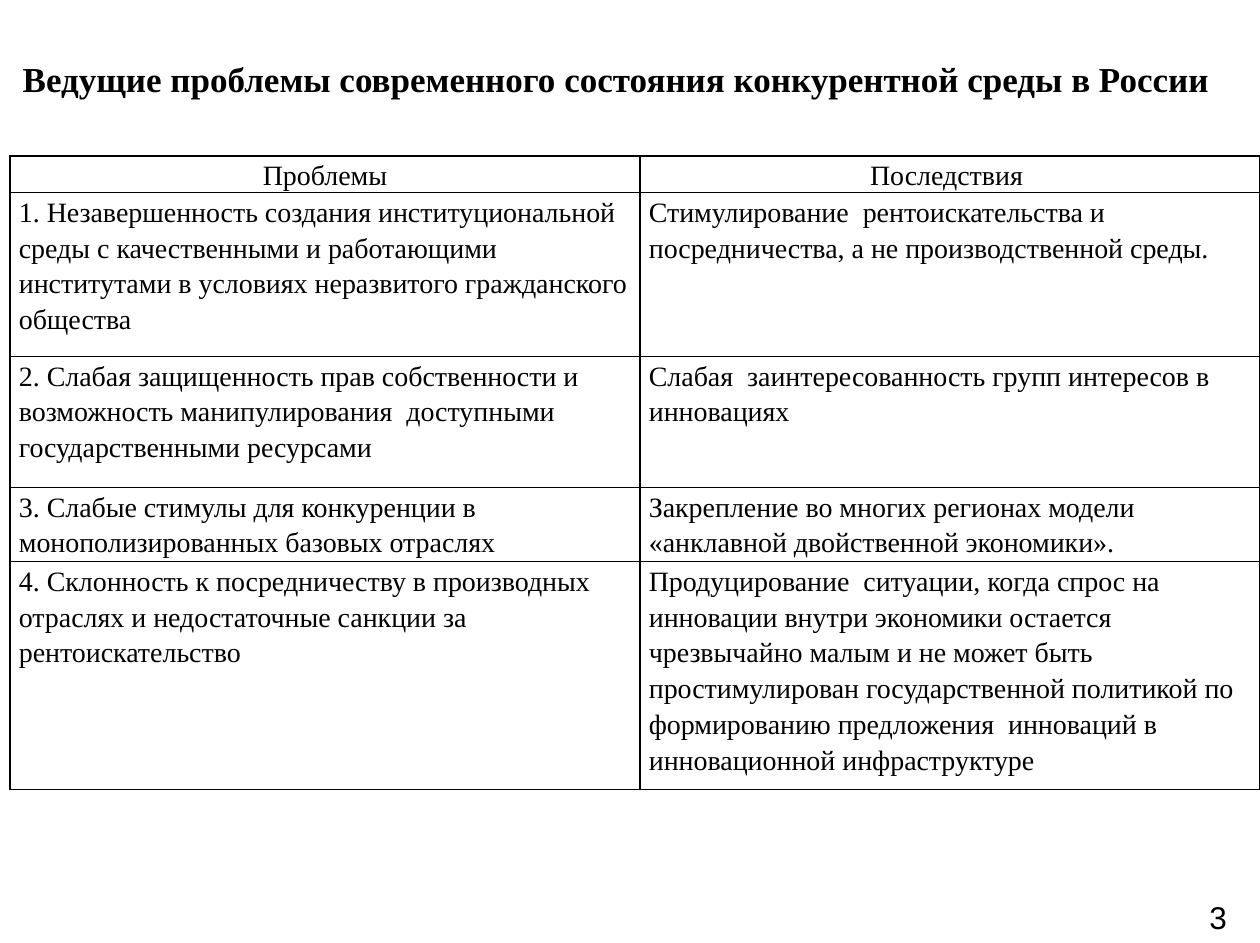
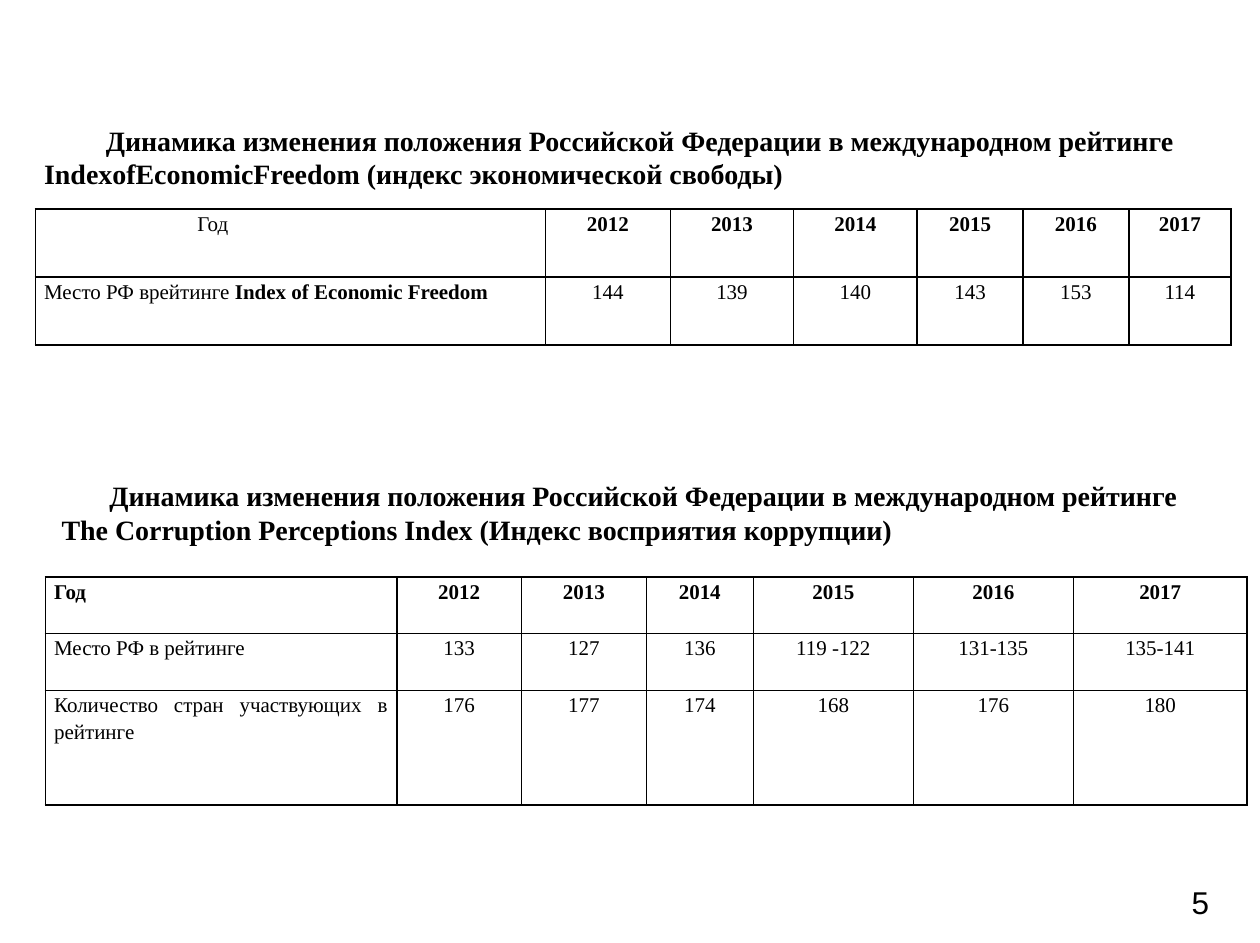
from dataclasses import dataclass
from typing import NamedTuple

from lxml.etree import SubElement
from pptx import Presentation
from pptx.dml.color import RGBColor
from pptx.enum.text import MSO_ANCHOR, MSO_AUTO_SIZE, PP_ALIGN
from pptx.oxml.ns import qn
from pptx.slide import Slide
from pptx.table import _Cell
from pptx.text.text import TextFrame, _Paragraph
from pptx.util import Inches, Pt

BLACK = RGBColor(0x00, 0x00, 0x00)
WHITE = RGBColor(0xFF, 0xFF, 0xFF)
BODY_FONT = "Times New Roman"
NUMBER_FONT = "Arial"
CELL_INSET = Inches(0.07)
BORDER_SIDES = ("a:lnL", "a:lnR", "a:lnT", "a:lnB")
YEARS = ("2012", "2013", "2014", "2015", "2016", "2017")
YEAR_TABS = ((1.34, "ctr"), (2.68, "r"))


class Run(NamedTuple):
    text: str
    bold: bool = False


class Box(NamedTuple):
    left: float
    top: float
    width: float
    height: float


@dataclass
class Cell:
    runs: tuple[Run, ...]
    align: PP_ALIGN = PP_ALIGN.LEFT
    tabs: tuple[tuple[float, str], ...] = ()


@dataclass
class Grid:
    left: float
    top: float
    widths: tuple[float, ...]
    heights: tuple[float, ...]
    rows: list[list[Cell]]
    size: int


@dataclass
class Heading:
    box: Box
    text: str
    size: int
    anchor: MSO_ANCHOR = MSO_ANCHOR.TOP
    margin: float = 0
    indent: float = 0
    inset: float = 0.06


def text_cell(text: str, align: PP_ALIGN = PP_ALIGN.LEFT, bold: bool = False) -> Cell:
    return Cell((Run(text, bold),), align)


def figures(values: tuple[str, ...], bold: bool = False) -> list[Cell]:
    return [text_cell(value, PP_ALIGN.CENTER, bold) for value in values]


def add_run(paragraph: _Paragraph, run: Run, size: int, font: str = BODY_FONT) -> None:
    added = paragraph.add_run()
    added.text = run.text
    added.font.name = font
    added.font.size = Pt(size)
    added.font.bold = run.bold
    added.font.color.rgb = BLACK


def add_tabs(paragraph: _Paragraph, tabs: tuple[tuple[float, str], ...]) -> None:
    tab_list = SubElement(paragraph._p.get_or_add_pPr(), qn("a:tabLst"))
    for position, align in tabs:
        SubElement(tab_list, qn("a:tab"), pos=str(Inches(position)), algn=align)


def add_borders(cell: _Cell) -> None:
    properties = cell._tc.get_or_add_tcPr()
    for side in BORDER_SIDES:
        line = SubElement(properties, qn(side), w=str(Pt(1)))
        fill = SubElement(line, qn("a:solidFill"))
        SubElement(fill, qn("a:srgbClr"), val=str(BLACK))


def fill_cell(cell: _Cell, content: Cell, size: int) -> None:
    add_borders(cell)
    cell.fill.solid()
    cell.fill.fore_color.rgb = WHITE
    cell.margin_left = cell.margin_right = CELL_INSET
    cell.margin_top = cell.margin_bottom = 0
    paragraph = cell.text_frame.paragraphs[0]
    paragraph.alignment = content.align
    paragraph.line_spacing = 1.15
    if content.tabs:
        add_tabs(paragraph, content.tabs)
    for run in content.runs:
        add_run(paragraph, run, size)


def add_grid(slide: Slide, grid: Grid) -> None:
    table = slide.shapes.add_table(
        len(grid.heights), len(grid.widths), Inches(grid.left), Inches(grid.top),
        Inches(sum(grid.widths)), Inches(sum(grid.heights)),
    ).table
    table.first_row = table.horz_banding = False
    for column, width in zip(table.columns, grid.widths):
        column.width = Inches(width)
    for row, height, contents in zip(table.rows, grid.heights, grid.rows):
        row.height = Inches(height)
        for cell, content in zip(row.cells, contents):
            fill_cell(cell, content, grid.size)


def write_heading(frame: TextFrame, heading: Heading) -> None:
    frame.word_wrap = True
    frame.auto_size = MSO_AUTO_SIZE.NONE
    frame.vertical_anchor = heading.anchor
    frame.margin_left = frame.margin_right = Inches(0.1)
    frame.margin_top = frame.margin_bottom = Inches(heading.inset)
    paragraph = frame.paragraphs[0]
    paragraph.alignment = PP_ALIGN.LEFT
    properties = paragraph._p.get_or_add_pPr()
    properties.set("marL", str(Inches(heading.margin)))
    properties.set("indent", str(Inches(heading.indent)))
    add_run(paragraph, Run(heading.text, True), heading.size)


def set_title(slide: Slide, heading: Heading) -> None:
    title = slide.shapes.title
    title.left, title.top, title.width, title.height = map(Inches, heading.box)
    write_heading(title.text_frame, heading)


def add_heading(slide: Slide, heading: Heading) -> None:
    textbox = slide.shapes.add_textbox(*map(Inches, heading.box))
    write_heading(textbox.text_frame, heading)


def add_page_number(slide: Slide, number: str, box: Box) -> None:
    frame = slide.shapes.add_textbox(*map(Inches, box)).text_frame
    frame.word_wrap = True
    add_run(frame.paragraphs[0], Run(number), 18, NUMBER_FONT)


PROBLEMS_TITLE = Heading(
    Box(0.08, 0.08, 9.92, 1.08),
    "Ведущие проблемы современного состояния конкурентной среды в России",
    20, MSO_ANCHOR.MIDDLE,
)
PROBLEMS = (
    ("1. Незавершенность создания институциональной среды с качественными и работающими "
     "институтами в условиях неразвитого гражданского общества",
     "Стимулирование  рентоискательства и посредничества, а не производственной среды."),
    ("2. Слабая защищенность прав собственности и возможность манипулирования  доступными "
     "государственными ресурсами",
     "Слабая  заинтересованность групп интересов в инновациях"),
    ("3. Слабые стимулы для конкуренции в монополизированных базовых отраслях",
     "Закрепление во многих регионах модели «анклавной двойственной экономики»."),
    ("4. Склонность к посредничеству в производных отраслях и недостаточные санкции за "
     "рентоискательство",
     "Продуцирование  ситуации, когда спрос на инновации внутри экономики остается "
     "чрезвычайно малым и не может быть простимулирован государственной политикой по "
     "формированию предложения  инноваций в инновационной инфраструктуре"),
)
PROBLEMS_GRID = Grid(
    0.08, 1.24, (5, 4.92), (0.29, 1.3, 1.04, 0.59, 1.81),
    [figures(("Проблемы", "Последствия "))]
    + [[text_cell(text) for text in pair] for pair in PROBLEMS],
    16,
)

FREEDOM_TITLE = Heading(
    Box(0.25, 0.92, 9.5, 0.94),
    "Динамика изменения положения Российской Федерации в международном рейтинге "
    "IndexofEconomicFreedom (индекс экономической свободы)",
    16, indent=0.49,
)
FREEDOM_GRID = Grid(
    0.28, 1.66, (4.05, 0.99, 0.98, 0.98, 0.84, 0.84, 0.81), (0.54, 0.54),
    [
        [Cell((Run("\tГод\t"),), tabs=YEAR_TABS), *figures(YEARS, bold=True)],
        [Cell((Run("Место РФ врейтинге "), Run("Index of Economic Freedom", True)),
              PP_ALIGN.JUSTIFY),
         *figures(("144", "139", "140", "143", "153", "114"))],
    ],
    12,
)
CORRUPTION_HEADING = Heading(
    Box(0.28, 3.74, 9.25, 1.04),
    "Динамика изменения положения Российской Федерации в международном рейтинге "
    "The Corruption Perceptions Index (Индекс восприятия коррупции)",
    16, margin=0.11, indent=0.38,
)
CORRUPTION_GRID = Grid(
    0.36, 4.58, (2.79, 0.99, 0.99, 0.85, 1.27, 1.27, 1.38), (0.45, 0.45, 0.91),
    [
        [text_cell("Год", PP_ALIGN.JUSTIFY, True), *figures(YEARS, bold=True)],
        [text_cell("Место РФ в рейтинге", PP_ALIGN.JUSTIFY),
         *figures(("133", "127", "136", "119 -122", "131-135", "135-141"))],
        [text_cell("Количество стран участвующих в рейтинге", PP_ALIGN.JUSTIFY),
         *figures(("176", "177", "174", "168", "176", "180"))],
    ],
    12,
)


def main() -> None:
    deck = Presentation()
    deck.slide_width = Inches(10)
    deck.slide_height = Pt(539)
    title_only = deck.slide_layouts.get_by_name("Title Only")

    problems = deck.slides.add_slide(title_only)
    set_title(problems, PROBLEMS_TITLE)
    add_grid(problems, PROBLEMS_GRID)
    add_page_number(problems, "3", Box(9.5, 7.08, 0.34, 0.4))

    ratings = deck.slides.add_slide(title_only)
    set_title(ratings, FREEDOM_TITLE)
    add_grid(ratings, FREEDOM_GRID)
    add_heading(ratings, CORRUPTION_HEADING)
    add_grid(ratings, CORRUPTION_GRID)
    add_page_number(ratings, "5", Box(9.36, 6.96, 0.58, 0.4))

    deck.save("out.pptx")


if __name__ == "__main__":
    main()
